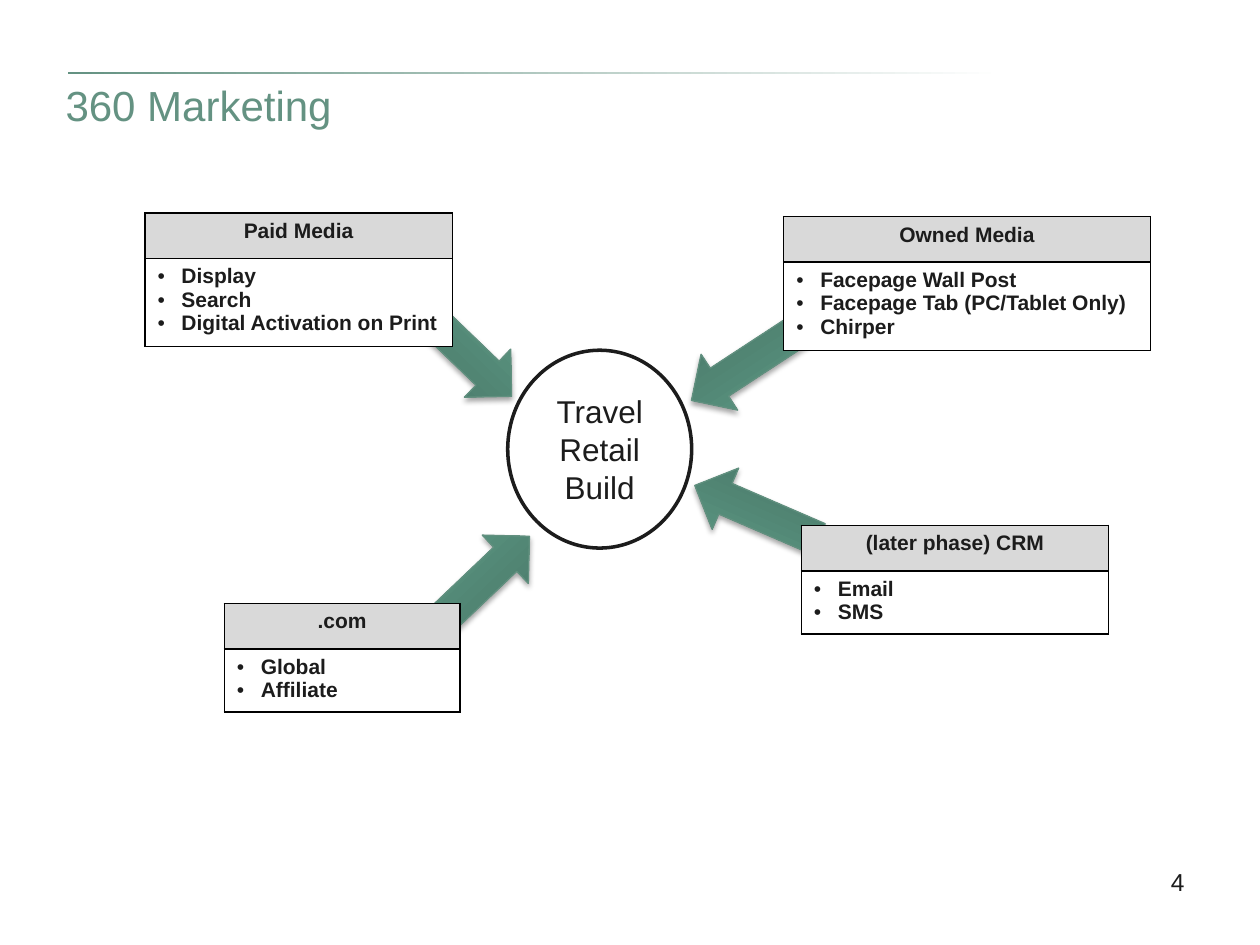
"""Build the 360 Marketing slide: four channel tables pointing at a central circle."""
from copy import deepcopy

from lxml.etree import SubElement
from pptx import Presentation
from pptx.dml.color import RGBColor
from pptx.enum.shapes import MSO_SHAPE
from pptx.enum.text import MSO_ANCHOR, PP_ALIGN
from pptx.oxml.ns import qn
from pptx.util import Inches, Pt

TITLE = "360 Marketing"
HUB = "Travel Retail Build"
PAGE_NUMBER = "4"

CHANNELS = [
    {"name": "Paid Media", "items": ["Display", "Search", "Digital Activation on Print"],
     "table": (1.15, 1.69, 2.44), "arrow": (3.14, 2.51, 43.9)},
    {"name": "Owned Media",
     "items": ["Facepage Wall Post", "Facepage Tab (PC/Tablet Only)", "Chirper"],
     "table": (6.22, 1.72, 2.91), "arrow": (5.4, 2.62, 146.8)},
    {"name": "(later phase) CRM", "items": ["Email", "SMS"],
     "table": (6.36, 4.17, 2.44), "arrow": (5.47, 3.8, 203.4)},
    {"name": ".com", "items": ["Global", "Affiliate"],
     "table": (1.78, 4.79, 1.87), "arrow": (3.28, 4.36, 316.4)},
]

FONT = "Arial"
INK = RGBColor(0x1C, 0x1C, 0x1C)
WHITE = RGBColor(0xFF, 0xFF, 0xFF)
GREY = RGBColor(0xD9, 0xD9, 0xD9)
GREEN = RGBColor(0x64, 0x92, 0x82)
ARROW_LINE = RGBColor(0x61, 0x90, 0x7F)
ARROW_STOPS = [
    (0, RGBColor(0x45, 0x72, 0x63)),
    (0.8, RGBColor(0x5A, 0x94, 0x80)),
    (1, RGBColor(0x5A, 0x96, 0x81)),
]
HEADER_HEIGHT = 0.36
LINE_HEIGHT = 0.19
CELL_PADDING = 0.1
BULLET_INDENT = Inches(0.19)


def style(para, size, color=INK, bold=False, align=None):
    para.font.name = FONT
    para.font.size = Pt(size)
    para.font.bold = bold
    para.font.color.rgb = color
    para.alignment = align


def add_plain_shape(page, kind, left, top, width, height):
    shape = page.shapes.add_shape(
        kind, Inches(left), Inches(top), Inches(width), Inches(height))
    shape.shadow.inherit = False
    return shape


def fill_gradient(shape, stops, angle):
    shape.fill.gradient()
    shape.fill.gradient_angle = angle
    stop_list = shape._element.spPr.find(qn("a:gradFill")).find(qn("a:gsLst"))
    while len(stop_list) < len(stops):
        stop_list.append(deepcopy(stop_list[0]))
    for stop, (position, color) in zip(shape.fill.gradient_stops, stops):
        stop.position = position
        stop.color.rgb = color


def add_arrow(page, left, top, rotation):
    arrow = add_plain_shape(page, MSO_SHAPE.RIGHT_ARROW, left, top, 1.07, 0.53)
    arrow.rotation = rotation
    fill_gradient(arrow, ARROW_STOPS, 90)
    arrow.line.color.rgb = ARROW_LINE
    arrow.line.width = Pt(0.75)
    effects = arrow._element.spPr.find(qn("a:effectLst"))
    shadow = SubElement(effects, qn("a:outerShdw"), blurRad=str(Pt(3.1)),
                        dist=str(Pt(1.8)), dir="5400000", rotWithShape="0")
    shade = SubElement(shadow, qn("a:srgbClr"), val="000000")
    SubElement(shade, qn("a:alpha"), val="35000")


def format_cell(cell, color):
    properties = cell._tc.get_or_add_tcPr()
    for side in ("a:lnL", "a:lnR", "a:lnT", "a:lnB"):
        border = SubElement(properties, qn(side), w=str(Pt(1)))
        paint = SubElement(border, qn("a:solidFill"))
        SubElement(paint, qn("a:srgbClr"), val="000000")
    cell.fill.solid()
    cell.fill.fore_color.rgb = color


def add_channel_table(page, name, items, left, top, width):
    body_height = len(items) * LINE_HEIGHT + CELL_PADDING
    table = page.shapes.add_table(
        2, 1, Inches(left), Inches(top), Inches(width),
        Inches(HEADER_HEIGHT + body_height)).table
    table.first_row = table.horz_banding = False
    table.rows[0].height = Inches(HEADER_HEIGHT)
    table.rows[1].height = Inches(body_height)
    header, body = table.cell(0, 0), table.cell(1, 0)
    format_cell(header, GREY)
    format_cell(body, WHITE)
    header.text = name
    style(header.text_frame.paragraphs[0], 12, bold=True, align=PP_ALIGN.CENTER)
    body.text = "\n".join(items)
    for para in body.text_frame.paragraphs:
        properties = para._p.get_or_add_pPr()
        properties.set("marL", str(BULLET_INDENT))
        properties.set("indent", str(-BULLET_INDENT))
        SubElement(properties, qn("a:buFont"), typeface=FONT)
        SubElement(properties, qn("a:buChar"), char="•")
        style(para, 12, bold=True)


def add_heading(page):
    rule = add_plain_shape(page, MSO_SHAPE.RECTANGLE, 0.54, 0.57, 7.42, 0.02)
    fill_gradient(rule, [(0, GREEN), (1, WHITE)], 0)
    rule.line.fill.background()
    title = page.shapes.title
    title.left, title.top = Inches(0.42), Inches(0.62)
    title.width, title.height = Inches(7.67), Inches(0.47)
    title.text = TITLE
    title.text_frame.vertical_anchor = MSO_ANCHOR.MIDDLE
    para = title.text_frame.paragraphs[0]
    style(para, 24, GREEN, align=PP_ALIGN.LEFT)
    para.line_spacing = 0.9


def add_page_number(page):
    box = page.shapes.add_textbox(Inches(7.17), Inches(6.83), Inches(2.33), Inches(0.52))
    box.text_frame.word_wrap = True
    box.text_frame.text = PAGE_NUMBER
    style(box.text_frame.paragraphs[0], 14, align=PP_ALIGN.RIGHT)


def add_hub(page):
    hub = add_plain_shape(page, MSO_SHAPE.OVAL, 4.03, 2.78, 1.46, 1.57)
    hub.fill.solid()
    hub.fill.fore_color.rgb = WHITE
    hub.line.color.rgb = INK
    hub.line.width = Pt(2)
    hub.text_frame.word_wrap = True
    hub.text_frame.vertical_anchor = MSO_ANCHOR.MIDDLE
    hub.text_frame.text = HUB
    style(hub.text_frame.paragraphs[0], 18, align=PP_ALIGN.CENTER)


def main():
    deck = Presentation()
    deck.slide_width, deck.slide_height = Inches(10), Inches(7.5)
    page = deck.slides.add_slide(deck.slide_layouts[5])
    add_heading(page)
    add_page_number(page)
    add_hub(page)
    for channel in CHANNELS:
        add_arrow(page, *channel["arrow"])
        add_channel_table(page, channel["name"], channel["items"], *channel["table"])
    deck.save("out.pptx")


if __name__ == "__main__":
    main()
